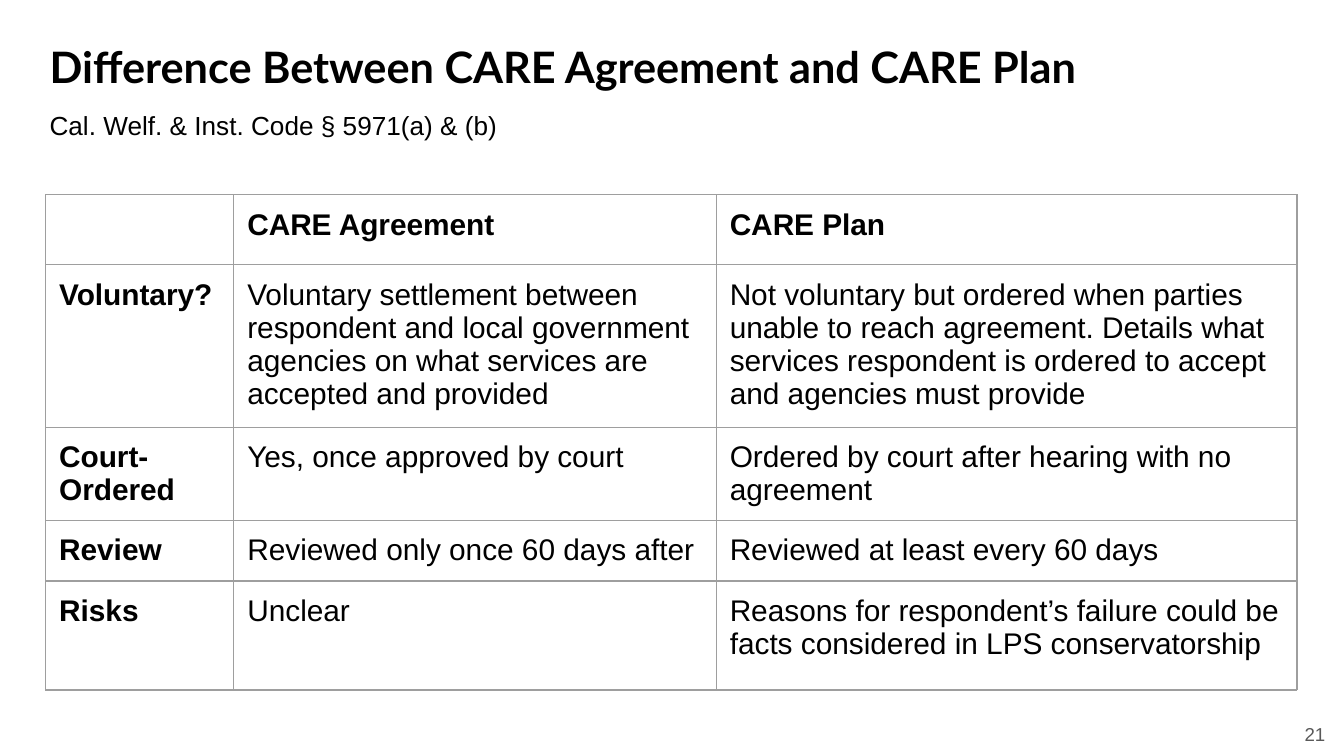
from lxml.etree import SubElement
from pptx import Presentation
from pptx.dml.color import RGBColor
from pptx.enum.text import MSO_ANCHOR as Anchor, MSO_AUTO_SIZE as AutoSize, PP_ALIGN as Align
from pptx.oxml.ns import qn
from pptx.util import Inches, Pt

COLORS = {"text": "000000", "number": "595959", "border": "9E9E9E"}
SLIDE_WIDTH = Inches(10)
SLIDE_HEIGHT = SLIDE_WIDTH * 9 // 16
INSET = Inches(0.1)
COLUMN_WIDTHS = [1.4, 3.59, 4.32]
ROW_HEIGHTS = [0.52, 1.21, 0.69, 0.45, 0.81]
COMPARISON = [
    ["", "CARE Agreement", "CARE Plan"],
    ["Voluntary?",
     "Voluntary settlement between respondent and local government agencies "
     "on what services are accepted and provided",
     "Not voluntary but ordered when parties unable to reach agreement. Details what "
     "services respondent is ordered to accept and agencies must provide"],
    ["Court-\nOrdered", "Yes, once approved by court",
     "Ordered by court after hearing with no agreement"],
    ["Review", "Reviewed only once 60 days after", "Reviewed at least every 60 days"],
    ["Risks", "Unclear",
     "Reasons for respondent’s failure could be facts considered in LPS conservatorship"],
]


def set_attributes(target, values):
    for name, value in values.items():
        setattr(target, name, value)


def write_text(frame, text, size, font="Arial", bold=False, color="text", **layout):
    paragraph = frame.paragraphs[0]
    paragraph.text = text
    set_attributes(paragraph, {"alignment": Align.LEFT, **layout})
    for run in paragraph.runs:
        set_attributes(run.font, {"name": font, "size": Pt(size), "bold": bold})
        run.font.color.rgb = RGBColor.from_string(COLORS[color])


def format_box(shape, left, top, width, height, anchor=Anchor.TOP):
    set_attributes(shape, {
        "left": Inches(left), "top": Inches(top),
        "width": Inches(width), "height": Inches(height),
    })
    set_attributes(shape.text_frame, {
        "word_wrap": True, "auto_size": AutoSize.NONE, "vertical_anchor": anchor,
        "margin_left": INSET, "margin_right": INSET,
        "margin_top": INSET, "margin_bottom": INSET,
    })
    return shape.text_frame


def add_text_box(slide, left, top, width, height, anchor=Anchor.TOP):
    shape = slide.shapes.add_textbox(0, 0, 0, 0)
    return format_box(shape, left, top, width, height, anchor)


def set_borders(cell):
    properties = cell._tc.get_or_add_tcPr()
    for side in ("lnL", "lnR", "lnT", "lnB"):
        line = SubElement(properties, qn(f"a:{side}"), w=str(Pt(0.75)))
        fill = SubElement(line, qn("a:solidFill"))
        SubElement(fill, qn("a:srgbClr"), val=COLORS["border"])


def format_cell(cell, text, bold):
    set_attributes(cell, {
        "margin_left": INSET, "margin_right": INSET,
        "margin_top": INSET, "margin_bottom": INSET,
        "vertical_anchor": Anchor.TOP,
    })
    set_borders(cell)
    cell.fill.background()
    write_text(cell.text_frame, text, 16, bold=bold)


def add_comparison_table(slide):
    table = slide.shapes.add_table(
        len(ROW_HEIGHTS), len(COLUMN_WIDTHS), Inches(0.34), Inches(1.45),
        Inches(sum(COLUMN_WIDTHS)), Inches(sum(ROW_HEIGHTS))).table
    set_attributes(table, {"first_row": False, "horz_banding": False})
    for column, width in zip(table.columns, COLUMN_WIDTHS):
        column.width = Inches(width)
    for row, height in zip(table.rows, ROW_HEIGHTS):
        row.height = Inches(height)
    for row_index, texts in enumerate(COMPARISON):
        for column_index, text in enumerate(texts):
            is_heading = row_index == 0 or column_index == 0
            format_cell(table.cell(row_index, column_index), text, is_heading)


def main():
    presentation = Presentation()
    set_attributes(presentation, {"slide_width": SLIDE_WIDTH, "slide_height": SLIDE_HEIGHT})
    slide = presentation.slides.add_slide(presentation.slide_layouts[5])
    title = format_box(slide.shapes.title, 0.27, 0.2, 9.32, 0.63)
    write_text(title, "Difference Between CARE Agreement and CARE Plan", 23.2,
               font="Lato", bold=True)
    citation = add_text_box(slide, 0.27, 0.68, 9.32, 0.52)
    write_text(citation, "Cal. Welf. & Inst. Code § 5971(a) & (b)", 14,
               line_spacing=1.15, space_after=Pt(12))
    add_comparison_table(slide)
    page_number = add_text_box(slide, 9.36, 5.25, 0.6, 0.43, Anchor.MIDDLE)
    write_text(page_number, "21", 10, color="number", alignment=Align.RIGHT)
    presentation.save("out.pptx")


if __name__ == "__main__":
    main()
